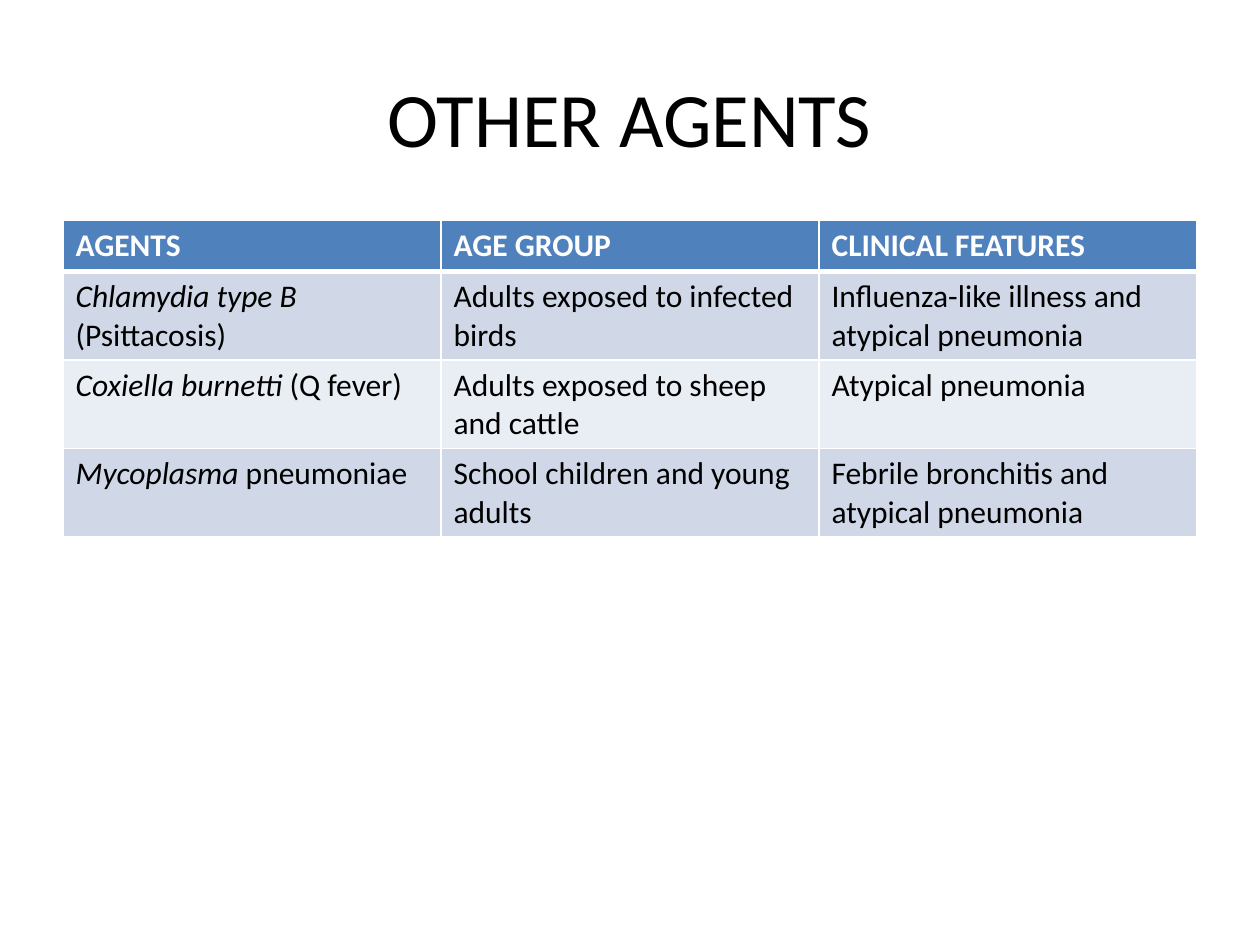
from lxml.etree import SubElement
from pptx import Presentation
from pptx.dml.color import RGBColor
from pptx.enum.text import MSO_ANCHOR, PP_ALIGN
from pptx.oxml.ns import qn
from pptx.util import Pt

COLORS = {"text": "000000", "white": "FFFFFF", "header": "4F81BD",
          "odd": "D0D8E8", "even": "E9EDF4"}
FONT = "Calibri"

# Each cell is a list of (text, italic) runs
HEADER = [[(name, False)] for name in ("AGENTS", "AGE GROUP", "CLINICAL FEATURES")]
AGENTS = [
    [[("Chlamydia type B ", True), ("(Psittacosis)", False)],
     [("Adults exposed to infected birds", False)],
     [("Influenza-like illness and atypical pneumonia", False)]],
    [[("Coxiella burnetti ", True), ("(Q fever)", False)],
     [("Adults exposed to sheep and cattle", False)],
     [("Atypical pneumonia", False)]],
    [[("Mycoplasma ", True), ("pneumoniae", False)],
     [("School children and young adults", False)],
     [("Febrile bronchitis and atypical pneumonia", False)]],
]


def add_run(p, text, color, **formats):
    r = p.add_run()
    r.text = text
    r.font.name = FONT
    r.font.color.rgb = RGBColor.from_string(COLORS[color])
    for name, value in formats.items():
        setattr(r.font, name, value)


def set_borders(cell, widths):
    """Draw white borders; widths maps each side to points."""
    tc_pr = cell._tc.get_or_add_tcPr()
    for i, (side, width) in enumerate(widths.items()):
        ln = SubElement(tc_pr, qn(f"a:ln{side}"), w=str(Pt(width)))
        fill = SubElement(ln, qn("a:solidFill"))
        SubElement(fill, qn("a:srgbClr"), val=COLORS["white"])
        tc_pr.insert(i, ln)  # borders come before the cell fill


def add_title(s, text, left, top, width, height):
    tf = s.shapes.add_textbox(Pt(left), Pt(top), Pt(width), Pt(height)).text_frame
    tf.word_wrap = True
    tf.vertical_anchor = MSO_ANCHOR.MIDDLE
    p = tf.paragraphs[0]
    p.alignment = PP_ALIGN.CENTER
    add_run(p, text, "text", size=Pt(44))


def add_agents_table(s, left, top, width, header_height, row_height):
    rows = [HEADER] + AGENTS
    height = header_height + row_height * len(AGENTS)
    table = s.shapes.add_table(len(rows), len(HEADER), Pt(left), Pt(top),
                               Pt(width), Pt(height)).table
    for col in table.columns:
        col.width = Pt(width / len(HEADER))
    for i, row in enumerate(rows):
        is_header = i == 0
        table.rows[i].height = Pt(header_height if is_header else row_height)
        fill = "header" if is_header else "odd" if i % 2 else "even"
        # The rule under the header is thicker than the other borders
        borders = {"L": 1, "R": 1, "T": 3 if i == 1 else 1, "B": 3 if is_header else 1}
        for cell, runs in zip(table.rows[i].cells, row):
            cell.fill.solid()
            cell.fill.fore_color.rgb = RGBColor.from_string(COLORS[fill])
            set_borders(cell, borders)
            for text, italic in runs:
                add_run(cell.text_frame.paragraphs[0], text,
                        "white" if is_header else "text",
                        size=Pt(18), bold=is_header, italic=italic)


def main():
    prs = Presentation()
    prs.slide_width, prs.slide_height = Pt(720), Pt(540)
    s = prs.slides.add_slide(prs.slide_layouts[6])
    add_title(s, "OTHER AGENTS", 36, 21.6, 648, 90)
    add_agents_table(s, 36, 126, 648, 29.2, 50.5)
    prs.save("out.pptx")


if __name__ == "__main__":
    main()
